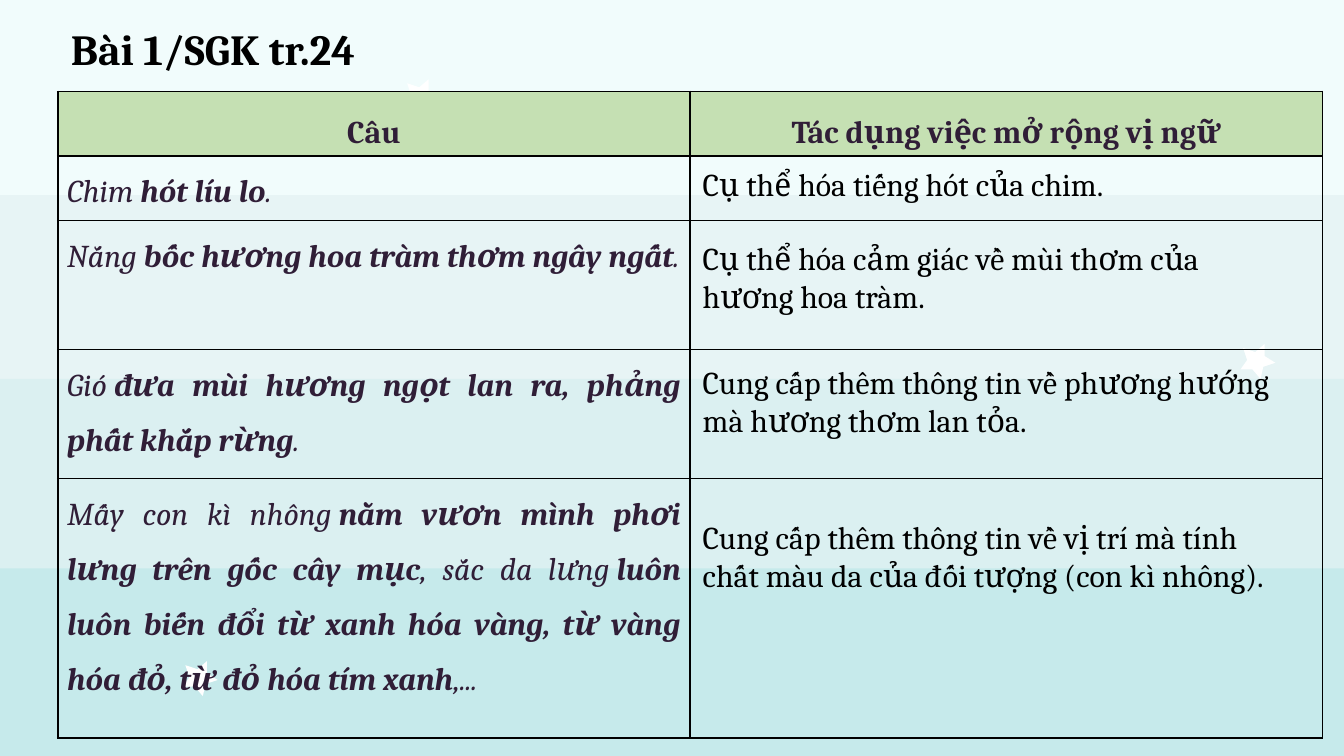
"""Build a slide with a Vietnamese exercise table on extending predicates."""
from lxml import etree
from pptx import Presentation
from pptx.dml.color import RGBColor
from pptx.enum.shapes import MSO_SHAPE
from pptx.enum.text import MSO_ANCHOR, PP_ALIGN
from pptx.oxml.ns import qn
from pptx.util import Inches, Pt

RECTANGLE = MSO_SHAPE.RECTANGLE
MIDDLE = MSO_ANCHOR.MIDDLE
CENTER, JUSTIFY, LEFT = PP_ALIGN.CENTER, PP_ALIGN.JUSTIFY, PP_ALIGN.LEFT

FONT = "Cambria"
FIXED_SPACE = chr(160)
BLACK, PLUM, GREEN, WHITE = "000000", "301E37", "C5E0B3", "FFFFFF"
BACKGROUND = "E7F4F5"
BANDS = [(2.82, 1.44, "DBF0F1"), (4.23, 1.44, "C6EAEB"), (-0.03, 1.48, "F1FCFC")]
STAR_UNIT = Inches(0.01)
STAR_POSITIONS = [(136, 492), (923, 256), (301, 59)]
STAR_POINTS = [(18, 0), (18, 9), (26, 14), (17, 17), (15, 26),
               (9, 19), (0, 19), (5, 12), (2, 3), (11, 6)]

TITLE = "Bài 1/SGK tr.24"
HEADERS = ["Câu", "Tác dụng việc mở rộng vị ngữ"]
SENTENCES = [
    ["Chim ", "hót líu lo", "."],
    ["Nắng ", "bốc hương hoa tràm thơm ngây ngất", "."],
    ["Gió ", "đưa mùi hương ngọt lan ra, phảng phất khắp rừng", "."],
    ["Mấy con kì nhông ", "nằm vươn mình phơi lưng trên gốc cây mục", ", sắc da lưng ",
     "luôn luôn biến đổi từ xanh hóa vàng, từ vàng hóa đỏ, từ đỏ hóa tím xanh", ",..."],
]
EFFECTS = [
    (1.18, 4.38, 0.39, "Cụ thể hóa tiếng hót của chim."),
    (1.73, 4.38, 0.67, "Cụ thể hóa cảm giác về mùi thơm của hương hoa tràm."),
    (2.65, 4.71, 0.67, "Cung cấp thêm thông tin về phương hướng mà hương thơm lan tỏa."),
    (3.8, 4.38, 0.96,
     "Cung cấp thêm thông tin về vị trí mà tính chất màu da của đối tượng (con kì nhông)."),
]
TABLE_LEFT, TABLE_TOP, TABLE_WIDTH = 0.43, 0.68, 9.41
ROW_HEIGHTS = [0.48, 0.48, 0.96, 0.96, 1.93]
EFFECT_LEFT = 5.13


def color(value):
    return RGBColor.from_string(value)


def paint(shape, value):
    shape.fill.solid()
    shape.fill.fore_color.rgb = color(value)
    shape.line.fill.background()
    shape.shadow.inherit = False


def style(paragraph, size, value, align, spacing=None):
    paragraph.alignment = align
    paragraph.line_spacing = spacing
    paragraph.font.name = FONT
    paragraph.font.size = Pt(size)
    paragraph.font.color.rgb = color(value)


def add_text(slide, left, top, width, height, text):
    box = slide.shapes.add_textbox(Inches(left), Inches(top), Inches(width), Inches(height))
    box.text_frame.word_wrap = True
    paragraph = box.text_frame.paragraphs[0]
    paragraph.text = text
    return paragraph


def add_borders(cell):
    properties = cell._tc.get_or_add_tcPr()
    for side in ("lnL", "lnR", "lnT", "lnB"):
        line = etree.SubElement(properties, qn(f"a:{side}"), w=str(Pt(1)))
        fill = etree.SubElement(line, qn("a:solidFill"))
        etree.SubElement(fill, qn("a:srgbClr"), val=BLACK)


def add_background(slide):
    slide.background.fill.solid()
    slide.background.fill.fore_color.rgb = color(BACKGROUND)
    for top, height, value in BANDS:
        band = slide.shapes.add_shape(
            RECTANGLE, Inches(-0.01), Inches(top), Inches(10.07), Inches(height))
        paint(band, value)
    for left, top in STAR_POSITIONS:
        points = [(left + x, top + y) for x, y in STAR_POINTS]
        builder = slide.shapes.build_freeform(*points[0], scale=STAR_UNIT)
        builder.add_line_segments(points[1:], close=True)
        paint(builder.convert_to_shape(), WHITE)


def add_sentence_table(slide):
    table = slide.shapes.add_table(
        len(ROW_HEIGHTS), len(HEADERS), Inches(TABLE_LEFT), Inches(TABLE_TOP),
        Inches(TABLE_WIDTH), Inches(sum(ROW_HEIGHTS))).table
    table.first_row = table.horz_banding = False
    for row, height in zip(table.rows, ROW_HEIGHTS):
        row.height = Inches(height)
    for cell in table.iter_cells():
        add_borders(cell)
        cell.fill.background()
        cell.margin_left = cell.margin_right = Inches(0.07)
        cell.margin_top = cell.margin_bottom = 0
    for column, header in enumerate(HEADERS):
        cell = table.cell(0, column)
        cell.fill.solid()
        cell.fill.fore_color.rgb = color(GREEN)
        cell.vertical_anchor = MIDDLE
        paragraph = cell.text_frame.paragraphs[0]
        paragraph.text = header
        style(paragraph, 17, PLUM, CENTER, 1.5)
        paragraph.font.bold = True
    for row, parts in enumerate(SENTENCES, start=1):
        paragraph = table.cell(row, 0).text_frame.paragraphs[0]
        style(paragraph, 17, PLUM, JUSTIFY, 1.5)
        paragraph.font.italic = True
        for index, part in enumerate(parts):
            run = paragraph.add_run()
            run.text = part[:-1] + FIXED_SPACE if part.endswith(" ") else part
            run.font.bold = index % 2 == 1


def main():
    presentation = Presentation()
    presentation.slide_width = Inches(10)
    presentation.slide_height = Inches(10) * 9 // 16
    slide = presentation.slides.add_slide(presentation.slide_layouts[6])
    add_background(slide)
    title = add_text(slide, 0.43, -0.07, 2.5, 0.61, TITLE)
    style(title, 23, BLACK, JUSTIFY, 1.5)
    title.font.bold = True
    add_sentence_table(slide)
    for top, width, height, text in EFFECTS:
        style(add_text(slide, EFFECT_LEFT, top, width, height, text), 17, BLACK, LEFT)
    presentation.save("out.pptx")


if __name__ == "__main__":
    main()
